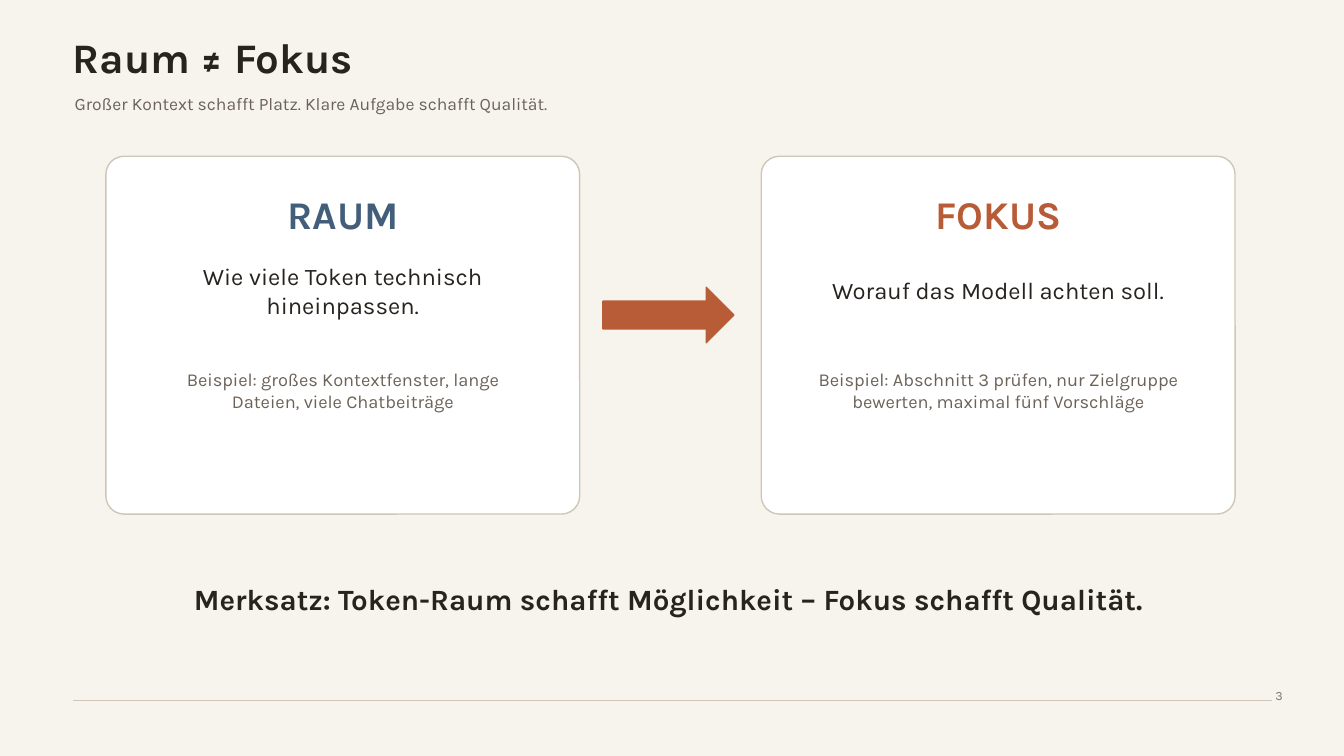
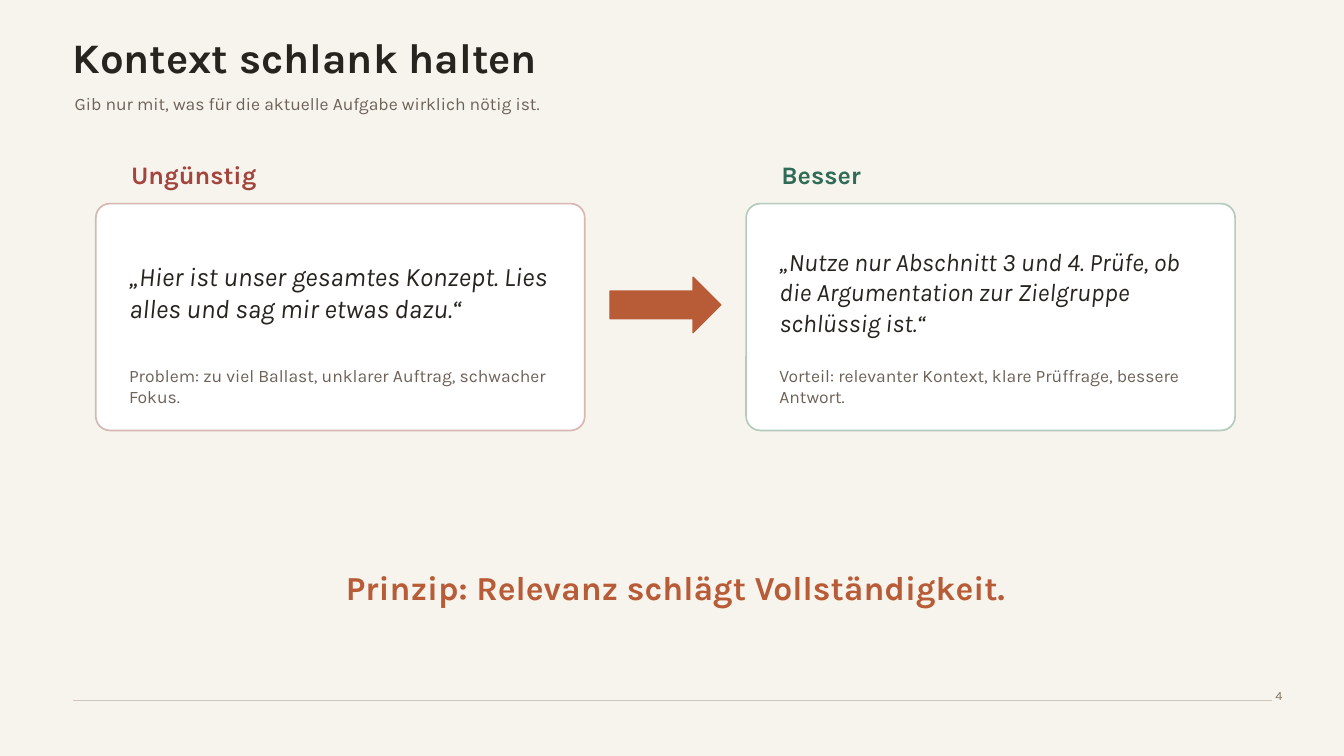
from lxml import etree
from pptx import Presentation
from pptx.dml.color import RGBColor
from pptx.enum.shapes import MSO_CONNECTOR, MSO_SHAPE
from pptx.enum.text import MSO_ANCHOR, PP_ALIGN
from pptx.oxml.ns import qn
from pptx.util import Emu, Pt

EMU_PER_PX = 9144
FONT = "Karla"
PAPER, WHITE, RULE = "F7F4EE", "FFFFFF", "D0C5B8"
INK, MUTED, PAGE = "27231F", "6C6258", "827667"
RUST, BLUE, RED, GREEN = "B85C38", "425E7B", "A3453D", "2F6B57"
PALE_RED, PALE_GREEN = "D7B7B1", "B5CBBB"
LEFT, CENTER = PP_ALIGN.LEFT, PP_ALIGN.CENTER
TOP, MIDDLE = MSO_ANCHOR.TOP, MSO_ANCHOR.MIDDLE
ROUNDED, ARROW = MSO_SHAPE.ROUNDED_RECTANGLE, MSO_SHAPE.RIGHT_ARROW
STRAIGHT = MSO_CONNECTOR.STRAIGHT


def px(*lengths):
    """Turn pixel lengths into EMU."""
    return [Emu(n * EMU_PER_PX) for n in lengths]


def rgb(value):
    """Turn a hex string into a colour."""
    return RGBColor.from_string(value)


def add_text(s, text, x, y, w, h, size=12.5, color=MUTED, bold=False,
             italic=False, align=LEFT, anchor=MIDDLE, inset=(0, 0)):
    """Add a wrapped text box with one formatted run."""
    tf = s.shapes.add_textbox(*px(x, y, w, h)).text_frame
    tf.word_wrap = True
    tf.vertical_anchor = anchor
    tf.margin_left, tf.margin_top = tf.margin_right, tf.margin_bottom = px(*inset)
    p = tf.paragraphs[0]
    p.alignment = align
    r = p.add_run()
    r.text = text
    r.font.name, r.font.size = FONT, Pt(size)
    r.font.bold, r.font.italic = bold, italic
    r.font.color.rgb = rgb(color)


def add_shape(s, kind, x, y, w, h, fill, line, width=1):
    """Add a flat preset shape and return it."""
    sp = s.shapes.add_shape(kind, *px(x, y, w, h))
    sp.shadow.inherit = False
    sp.fill.solid()
    sp.fill.fore_color.rgb = rgb(fill)
    sp.line.color.rgb = rgb(line)
    sp.line.width = Pt(width)
    return sp


def add_card(s, x, y, w, h, radius, line, width=1):
    """Add a white card with rounded corners."""
    sp = add_shape(s, ROUNDED, x, y, w, h, WHITE, line, width)
    sp.adjustments[0] = radius / min(w, h)


def add_arrow(s, x, y, w):
    """Add a rust arrow pointing right."""
    add_shape(s, ARROW, x, y, w, 55, RUST, RUST)


def add_rule(s, x1, x2, y):
    """Add a thin horizontal line."""
    line = s.shapes.add_connector(STRAIGHT, *px(x1, y, x2, y))
    line.line.color.rgb = rgb(RULE)
    line.line.width = Pt(1)
    etree.SubElement(line._element.spPr, qn("a:effectLst"))


def add_slide(prs, title, subtitle, number):
    """Add a slide with its title, subtitle, footer rule and page number."""
    s = prs.slides.add_slide(prs.slide_layouts[6])
    add_rule(s, 72, 1262, 695)
    add_text(s, title, 72, 35, 860, 42, size=30, color=INK, bold=True)
    add_text(s, subtitle, 74, 85, 1060, 35)
    add_text(s, str(number), 1255, 678, 78, 33, size=9, color=PAGE,
             anchor=TOP, inset=(10, 5))
    return s


def add_concept(s, x, heading, color, meaning, example):
    """Add a card that defines one concept."""
    add_card(s, x, 155, 470, 355, 18, RULE)
    add_text(s, heading, x + 30, 190, 410, 45, size=28, color=color,
             bold=True, align=CENTER)
    add_text(s, meaning, x + 50, 260, 370, 56, size=17, color=INK, align=CENTER)
    add_text(s, example, x + 50, 355, 370, 65, size=13, align=CENTER)


def add_prompt(s, x, label, color, border, quote, size, verdict):
    """Add a labelled card with a sample prompt and its verdict."""
    add_text(s, label, x + 35, 158, 240, 30, size=18, color=color, bold=True)
    add_card(s, x, 202, 485, 225, 14, border, 1.2)
    add_text(s, quote, x + 33, 238, 415, 103, size=size, color=INK, italic=True)
    add_text(s, verdict, x + 33, 365, 415, 35)


def build_focus(prs):
    """Build the slide on space versus focus."""
    s = add_slide(prs, "Raum ≠ Fokus",
                  "Großer Kontext schafft Platz. Klare Aufgabe schafft Qualität.", 3)
    add_concept(s, 105, "RAUM", BLUE, "Wie viele Token technisch hineinpassen.",
                "Beispiel: großes Kontextfenster, lange Dateien, viele Chatbeiträge")
    add_arrow(s, 598, 285, 130)
    add_concept(s, 755, "FOKUS", RUST, "Worauf das Modell achten soll.",
                "Beispiel: Abschnitt 3 prüfen, nur Zielgruppe bewerten, "
                "maximal fünf Vorschläge")
    add_text(s, "Merksatz: Token-Raum schafft Möglichkeit – Fokus schafft Qualität.",
             108, 575, 1110, 38, size=21, color=INK, bold=True, align=CENTER)


def build_lean_context(prs):
    """Build the slide on keeping the context lean."""
    s = add_slide(prs, "Kontext schlank halten",
                  "Gib nur mit, was für die aktuelle Aufgabe wirklich nötig ist.", 4)
    add_prompt(s, 95, "Ungünstig", RED, PALE_RED,
               "„Hier ist unser gesamtes Konzept. Lies alles und sag mir etwas dazu.“",
               19, "Problem: zu viel Ballast, unklarer Auftrag, schwacher Fokus.")
    add_arrow(s, 605, 275, 110)
    add_prompt(s, 740, "Besser", GREEN, PALE_GREEN,
               "„Nutze nur Abschnitt 3 und 4. Prüfe, ob die Argumentation "
               "zur Zielgruppe schlüssig ist.“",
               18, "Vorteil: relevanter Kontext, klare Prüffrage, bessere Antwort.")
    add_text(s, "Prinzip: Relevanz schlägt Vollständigkeit.", 270, 560, 800, 44,
             size=24, color=RUST, bold=True, align=CENTER)


def main():
    """Build and save the presentation."""
    prs = Presentation()
    prs.slide_width, prs.slide_height = px(1333, 750)
    background = prs.slide_master.background.fill
    background.solid()
    background.fore_color.rgb = rgb(PAPER)
    build_focus(prs)
    build_lean_context(prs)
    prs.save("out.pptx")


if __name__ == "__main__":
    main()
